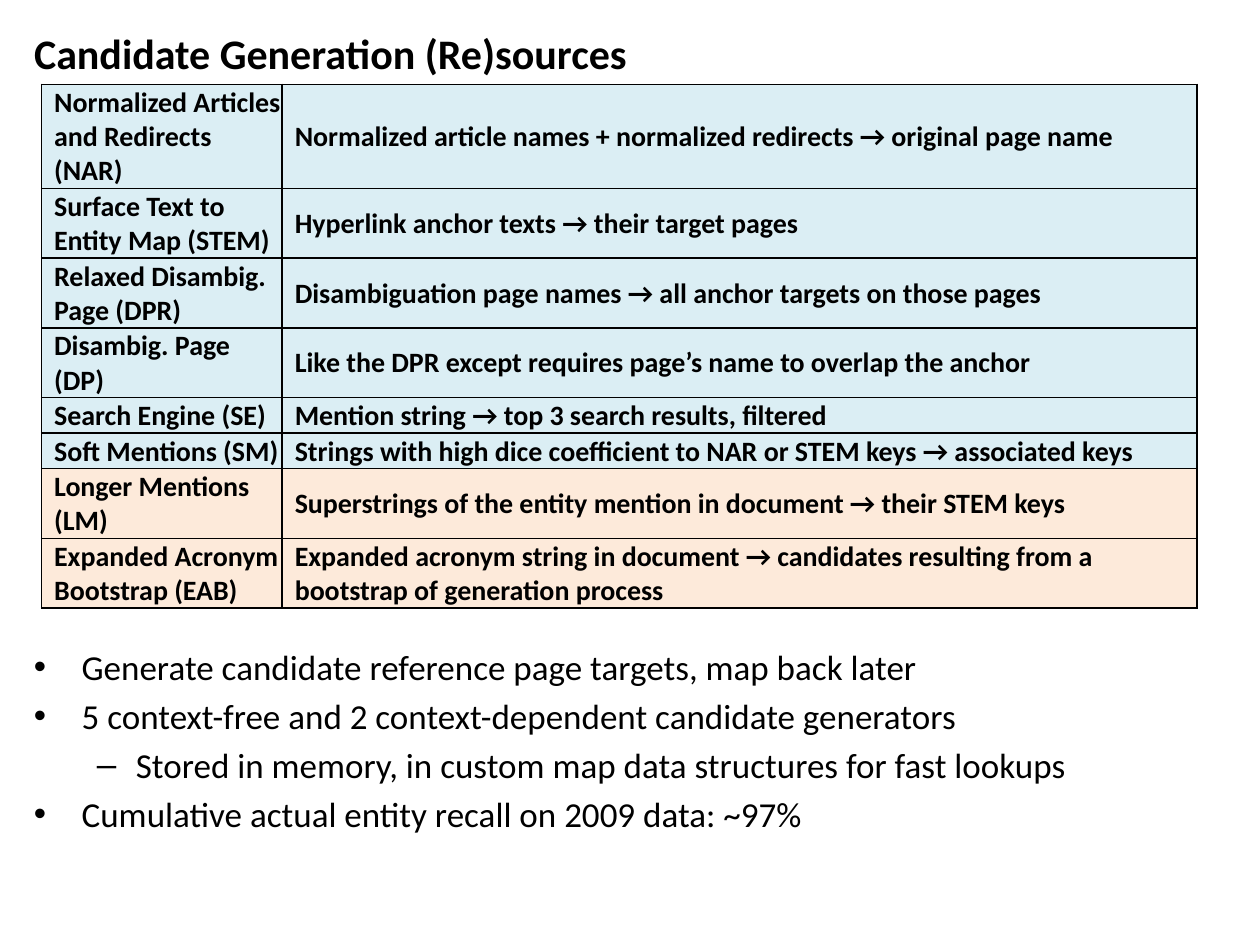
from typing import NamedTuple

from lxml.etree import SubElement
from pptx import Presentation
from pptx.dml.color import RGBColor
from pptx.enum.text import MSO_ANCHOR, PP_ALIGN
from pptx.oxml.ns import qn
from pptx.util import Inches, Pt

FONT = "Calibri"
BLACK = RGBColor(0x00, 0x00, 0x00)
CONTEXT_FREE = RGBColor(0xDB, 0xEE, 0xF4)
CONTEXT_DEPENDENT = RGBColor(0xFD, 0xEA, 0xDA)

SLIDE_W, SLIDE_H = Inches(10), Inches(7.5)
MARGIN = Inches(0.17)
ROW_H = Inches(0.25)
NAME_W, SOURCE_W = Inches(1.91), Inches(7.26)


class Generator(NamedTuple):
    name: str
    source: str
    fill: RGBColor = CONTEXT_FREE


class Point(NamedTuple):
    text: str
    level: int = 0


class BulletStyle(NamedTuple):
    mark: str
    left: float
    hanging: float


GENERATORS = [
    Generator("Normalized Articles and Redirects (NAR)",
              "Normalized article names + normalized redirects → original page name"),
    Generator("Surface Text to Entity Map (STEM)",
              "Hyperlink anchor texts → their target pages"),
    Generator("Relaxed Disambig. Page (DPR)",
              "Disambiguation page names → all anchor targets on those pages"),
    Generator("Disambig. Page (DP)",
              "Like the DPR except requires page’s name to overlap the anchor"),
    Generator("Search Engine (SE)",
              "Mention string → top 3 search results, filtered"),
    Generator("Soft Mentions (SM)",
              "Strings with high dice coefficient to NAR or STEM keys → associated keys"),
    Generator("Longer Mentions (LM)",
              "Superstrings of the entity mention in document → their STEM keys",
              CONTEXT_DEPENDENT),
    Generator("Expanded Acronym Bootstrap (EAB)",
              "Expanded acronym string in document → candidates resulting from a "
              "bootstrap of generation process", CONTEXT_DEPENDENT),
]

POINTS = [
    Point("Generate candidate reference page targets, map back later"),
    Point("5 context-free and 2 context-dependent candidate generators"),
    Point("Stored in memory, in custom map data structures for fast lookups", 1),
    Point("Cumulative actual entity recall on 2009 data: ~97%"),
]

BULLETS = [BulletStyle("•", 0.38, 0.38), BulletStyle("–", 0.81, 0.31)]


def add_run(paragraph, text: str, size: int, bold: bool = False) -> None:
    run = paragraph.add_run()
    run.text = text
    run.font.name = FONT
    run.font.size = Pt(size)
    run.font.bold = bold
    run.font.color.rgb = BLACK


def add_borders(cell, width: int = Pt(1)) -> None:
    """Outline a cell; the lines must come before its fill."""
    properties = cell._tc.get_or_add_tcPr()
    for index, side in enumerate(("a:lnL", "a:lnR", "a:lnT", "a:lnB")):
        line = SubElement(properties, qn(side), w=str(width))
        fill = SubElement(line, qn("a:solidFill"))
        SubElement(fill, qn("a:srgbClr"), val=str(BLACK))
        properties.insert(index, line)


def fill_cell(cell, text: str, fill: RGBColor) -> None:
    add_borders(cell)
    cell.fill.solid()
    cell.fill.fore_color.rgb = fill
    cell.vertical_anchor = MSO_ANCHOR.MIDDLE
    cell.margin_left = Inches(0.1)
    cell.margin_top = cell.margin_right = Inches(0.01)
    cell.margin_bottom = 0
    add_run(cell.text_frame.paragraphs[0], text, 16, bold=True)


def add_generator_table(slide, generators: list[Generator]) -> None:
    table = slide.shapes.add_table(
        len(generators), 2, Inches(0.33), Inches(0.67),
        NAME_W + SOURCE_W, ROW_H * len(generators)).table
    table.first_row = table.horz_banding = False
    table.columns[0].width, table.columns[1].width = NAME_W, SOURCE_W
    for row, generator in zip(table.rows, generators):
        row.height = ROW_H
        fill_cell(row.cells[0], generator.name, generator.fill)
        fill_cell(row.cells[1], generator.source, generator.fill)


def add_points(slide, points: list[Point]) -> None:
    frame = slide.shapes.add_textbox(
        MARGIN, Inches(5.07), int(SLIDE_W * 0.95), Inches(1.77)).text_frame
    frame.word_wrap = True
    for index, point in enumerate(points):
        paragraph = frame.add_paragraph() if index else frame.paragraphs[0]
        style = BULLETS[point.level]
        properties = paragraph._p.get_or_add_pPr()
        properties.set("marL", str(Inches(style.left)))
        properties.set("indent", str(-Inches(style.hanging)))
        SubElement(properties, qn("a:buFont"), typeface="Arial")
        SubElement(properties, qn("a:buChar"), char=style.mark)
        paragraph.level = point.level
        if index:
            paragraph.space_before = Pt(4)
        add_run(paragraph, point.text, 20)


def main() -> None:
    deck = Presentation()
    deck.slide_width, deck.slide_height = SLIDE_W, SLIDE_H
    slide = deck.slides.add_slide(deck.slide_layouts[5])

    # Title
    title = slide.shapes.title
    title.left, title.top = MARGIN, MARGIN
    title.width, title.height = int(SLIDE_W * 0.8), Inches(0.5)
    title.text_frame.vertical_anchor = MSO_ANCHOR.MIDDLE
    heading = title.text_frame.paragraphs[0]
    heading.alignment = PP_ALIGN.LEFT
    add_run(heading, "Candidate Generation (Re)sources", 24, bold=True)

    # Candidate generators and the points about them
    add_generator_table(slide, GENERATORS)
    add_points(slide, POINTS)

    deck.save("out.pptx")


if __name__ == "__main__":
    main()
